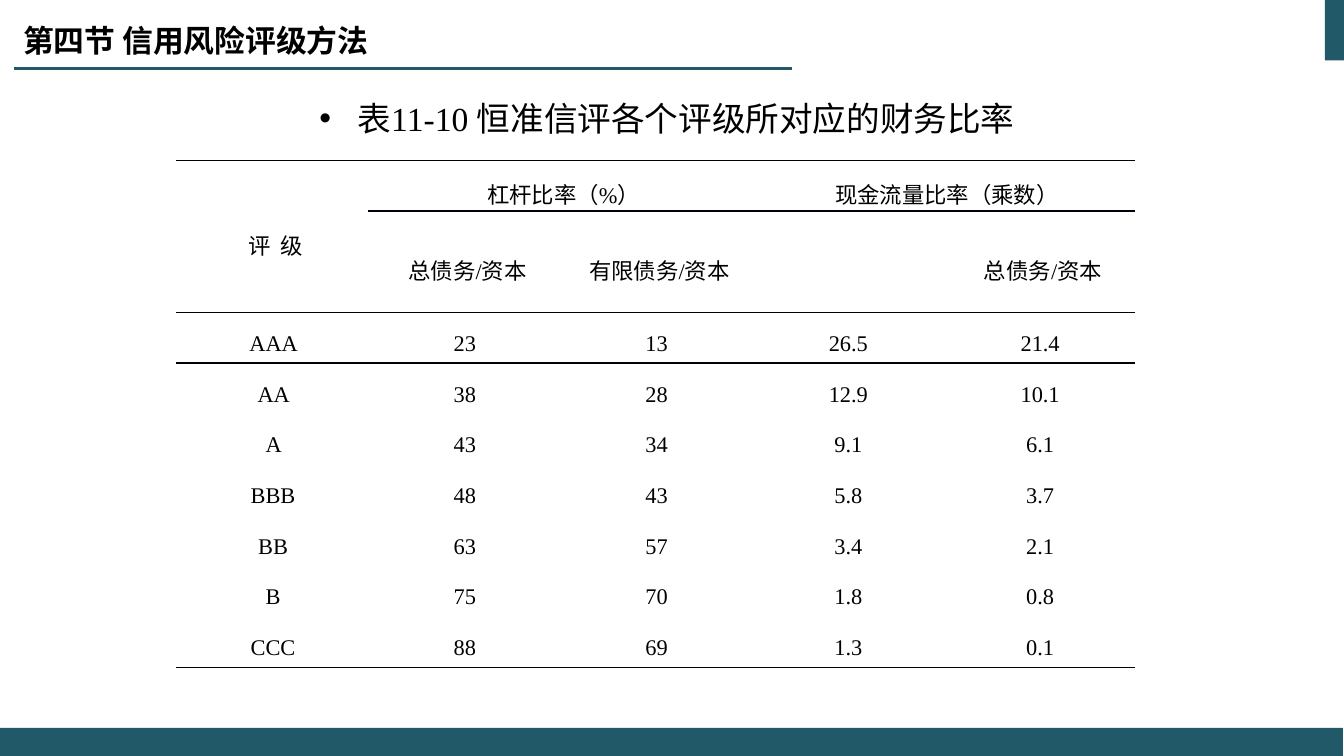
from pptx import Presentation
from pptx.dml.color import RGBColor
from pptx.enum import shapes, text
from pptx.oxml import parse_xml
from pptx.oxml.ns import nsdecls, qn
from pptx.util import Inches, Pt

TEAL, BLACK, RULE = "215968", "000000", "000008"
CJK, SERIF = "Noto Sans CJK SC", "Times New Roman"


def rgb(value):
    return RGBColor.from_string(value)


def set_font(r, size, name, bold=False):
    r.font.size, r.font.name, r.font.bold = Pt(size), name, bold
    r.font.color.rgb = rgb(BLACK)
    rPr = r.font._element
    rPr.find(qn("a:latin")).addnext(
        parse_xml(f'<a:ea {nsdecls("a")} typeface="{CJK}"/>'))


prs = Presentation()
prs.slide_width, prs.slide_height = Inches(13.33), Inches(7.5)
s = prs.slides.add_slide(prs.slide_layouts[5])

# Corner block, footer band and title underline
for box in [(13.14, 0, 0.2, 0.6), (0, 7.22, 13.32, 0.28)]:
    sp = s.shapes.add_shape(shapes.MSO_SHAPE.RECTANGLE, *map(Inches, box))
    sp.shadow.inherit = False
    sp.fill.solid()
    sp.fill.fore_color.rgb = rgb(TEAL)
    sp.line.fill.background()
line = s.shapes.add_connector(shapes.MSO_CONNECTOR.STRAIGHT, Inches(7.86),
                              Inches(0.68), Inches(0.14), Inches(0.68))
line.line.color.rgb = rgb(TEAL)
line.line.width = Pt(1.5)
line._element.spPr.append(parse_xml(f'<a:effectLst {nsdecls("a")}/>'))

# Title
title = s.shapes.title
title.left, title.top = Inches(0.13), Inches(-0.03)
title.width, title.height = Inches(8.31), Inches(0.85)
tf = title.text_frame
tf.text = "第四节 信用风险评级方法"
tf.vertical_anchor = text.MSO_ANCHOR.MIDDLE
tf.paragraphs[0].alignment = text.PP_ALIGN.LEFT
set_font(tf.paragraphs[0].runs[0], 22, CJK, True)

# Table caption
caption = s.shapes.add_textbox(Inches(0.11), Inches(0.68), Inches(13.01), Inches(0.66))
tf = caption.text_frame
tf.word_wrap = True
tf.auto_size = text.MSO_AUTO_SIZE.SHAPE_TO_FIT_TEXT
p = tf.paragraphs[0]
p.text = "表11-10 恒准信评各个评级所对应的财务比率"
p.alignment = text.PP_ALIGN.CENTER
p.line_spacing = 1.6
pPr = p._p.get_or_add_pPr()
pPr.set("marL", str(Inches(0.38)))
pPr.set("indent", str(Inches(-0.38)))
pPr.append(parse_xml(f'<a:buFont {nsdecls("a")} typeface="Arial"/>'))
pPr.append(parse_xml(f'<a:buChar {nsdecls("a")} char="•"/>'))
set_font(p.runs[0], 24, SERIF)

# Ratio table: "|" separates runs, None leaves a cell empty
rows = [
    ["评  级", "杠杆比率（|%|）", None, "现金流量比率（乘数）", None],
    [None, "总债务|/|资本", "有限债务|/|资本", None, "总债务|/|资本"],
    ["AAA ", "23 ", "13 ", "26.5 ", "21.4 "],
    ["AA ", "38 ", "28 ", "12.9 ", "10.1 "],
    ["A ", "43 ", "34 ", "9.1 ", "6.1 "],
    ["BBB ", "48 ", "43 ", "5.8 ", "3.7 "],
    ["BB ", "63 ", "57 ", "3.4 ", "2.1 "],
    ["B ", "75 ", "70 ", "1.8 ", "0.8 "],
    ["CCC ", "88 ", "69 ", "1.3 ", "0.1 "],
]
last = len(rows) - 1
table = s.shapes.add_table(len(rows), 5, Inches(1.75), Inches(1.59),
                           Inches(9.51), Inches(5.03)).table
table.first_row = table.horz_banding = False
unit = Inches(5.03) // (len(rows) + 1)
for i, row in enumerate(table.rows):
    row.height = unit * 2 if i == 1 else unit
# Plain style without grid
table._tbl.tblPr.find(qn("a:tableStyleId")).text = "{2D5ABB26-0587-4C30-8999-92F81FD0307C}"

for i, row in enumerate(rows):
    for j, value in enumerate(row):
        cell = table.cell(i, j)
        cell.margin_left = cell.margin_right = Inches(0.07)
        cell.margin_top = cell.margin_bottom = 0
        cell.vertical_anchor = text.MSO_ANCHOR.MIDDLE
        tcPr = cell._tc.get_or_add_tcPr()
        edges = {"lnT": i in (0, 2) or (i == 1 and j > 0), "lnB": i in (0, 1, last)}
        for edge, ruled in edges.items():
            if ruled:
                tcPr.append(parse_xml(
                    f'<a:{edge} {nsdecls("a")} w="{Pt(1)}"><a:solidFill>'
                    f'<a:srgbClr val="{RULE}"/></a:solidFill></a:{edge}>'))
        cell.fill.background()
        if value is None:
            continue
        p = cell.text_frame.paragraphs[0]
        p.alignment = text.PP_ALIGN.CENTER
        p.line_spacing = 1.5
        p._p.get_or_add_pPr().set("marL", str(Inches(0.07)))
        for part in value.split("|"):
            r = p.add_run()
            r.text = part
            set_font(r, 16, SERIF if part.isascii() else CJK)

# Header spans
for first, end in [((0, 0), (1, 0)), ((0, 1), (0, 2)), ((0, 3), (0, 4))]:
    table.cell(*first).merge(table.cell(*end))

prs.save("out.pptx")
